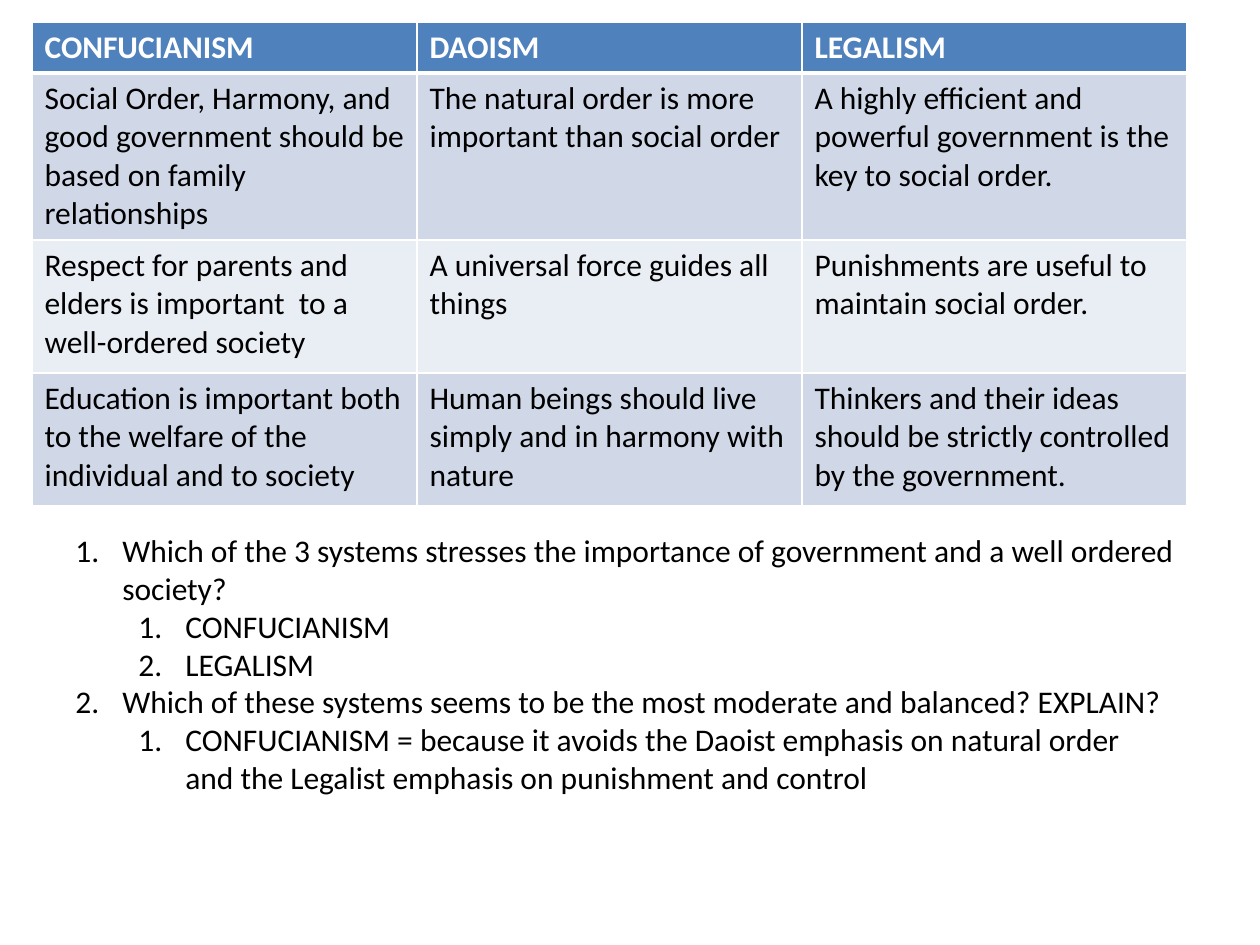
from lxml import etree
from pptx import Presentation
from pptx.dml.color import RGBColor
from pptx.enum import text
from pptx.oxml.ns import qn
from pptx.util import Emu, Pt


class Theme:
    font = "Calibri"
    size = 18
    ink = "000000"
    white = "FFFFFF"
    header = "4F81BD"
    bands = ("D0D8E8", "E9EDF4")
    thin, thick = 1, 3


PX_PER_INCH = 126
ROW_HEIGHTS = (49, 167, 133, 133)
NUMBER_HANG = 47
LEVEL_STEP = 63

BELIEFS = [
    ("CONFUCIANISM", "DAOISM", "LEGALISM"),
    ("Social Order, Harmony, and good government should be based on family relationships",
     "The natural order is more important than social order",
     "A highly efficient and powerful government is the key to social order."),
    ("Respect for parents and elders is important  to a well-ordered society",
     "A universal force guides all things",
     "Punishments are useful to maintain social order."),
    ("Education is important both to the welfare of the individual and to society",
     "Human beings should live simply and in harmony with nature",
     "Thinkers and their ideas should be strictly controlled by the government."),
]

QUESTIONS = [
    (0, "Which of the 3 systems stresses the importance of government and a well ordered society?"),
    (1, "CONFUCIANISM"),
    (1, "LEGALISM"),
    (0, "Which of these systems seems to be the most moderate and balanced? EXPLAIN?"),
    (1, "CONFUCIANISM = because it avoids the Daoist emphasis on natural order "
        "and the Legalist emphasis on punishment and control"),
]


def px(length):
    return Emu(round(length * 914400 / PX_PER_INCH))


def add_span(para, words, color, bold=False):
    span = para.add_run()
    span.text = words
    span.font.name = Theme.font
    span.font.size = Pt(Theme.size)
    span.font.bold = bold
    span.font.color.rgb = RGBColor.from_string(color)


def set_borders(cell, top, bottom):
    properties = cell._tc.get_or_add_tcPr()
    widths = (("lnL", Theme.thin), ("lnR", Theme.thin), ("lnT", top), ("lnB", bottom))
    # Borders come before the fill in the cell properties
    for place, (side, width) in enumerate(widths):
        line = etree.Element(qn(f"a:{side}"), w=str(Pt(width)))
        fill = etree.SubElement(line, qn("a:solidFill"))
        etree.SubElement(fill, qn("a:srgbClr"), val=Theme.white)
        properties.insert(place, line)


def number_paragraph(para, level):
    para.level = level
    properties = para._p.get_or_add_pPr()
    properties.set("marL", str(px(NUMBER_HANG + level * LEVEL_STEP)))
    properties.set("indent", str(-px(NUMBER_HANG)))
    etree.SubElement(properties, qn("a:buFont"), typeface="+mj-lt")
    etree.SubElement(properties, qn("a:buAutoNum"), type="arabicPeriod")


def add_belief_table(page, left, top, width):
    frame = page.shapes.add_table(len(BELIEFS), len(BELIEFS[0]), px(left), px(top),
                                  px(width), px(sum(ROW_HEIGHTS)))
    table = frame.table
    for column in table.columns:
        column.width = px(width / len(BELIEFS[0]))
    for r, (height, beliefs) in enumerate(zip(ROW_HEIGHTS, BELIEFS)):
        table.rows[r].height = px(height)
        is_header = r == 0
        for c, words in enumerate(beliefs):
            cell = table.cell(r, c)
            cell.fill.solid()
            cell.fill.fore_color.rgb = RGBColor.from_string(
                Theme.header if is_header else Theme.bands[(r - 1) % 2])
            set_borders(cell, Theme.thick if r == 1 else Theme.thin,
                        Theme.thick if is_header else Theme.thin)
            add_span(cell.text_frame.paragraphs[0], words,
                     Theme.white if is_header else Theme.ink, is_header)


def add_questions(page, left, top, width, height):
    box = page.shapes.add_textbox(px(left), px(top), px(width), px(height))
    frame = box.text_frame
    frame.word_wrap = True
    frame.auto_size = text.MSO_AUTO_SIZE.SHAPE_TO_FIT_TEXT
    for i, (level, words) in enumerate(QUESTIONS):
        para = frame.add_paragraph() if i else frame.paragraphs[0]
        number_paragraph(para, level)
        add_span(para, words, Theme.ink)


def main():
    deck = Presentation()
    deck.slide_width, deck.slide_height = px(1260), px(945)
    page = deck.slides.add_slide(deck.slide_layouts[6])

    # Comparison of the three systems
    add_belief_table(page, 32, 22, 1155)
    # Numbered questions with answers
    add_questions(page, 63, 525, 1124, 280)

    deck.save("out.pptx")


if __name__ == "__main__":
    main()
